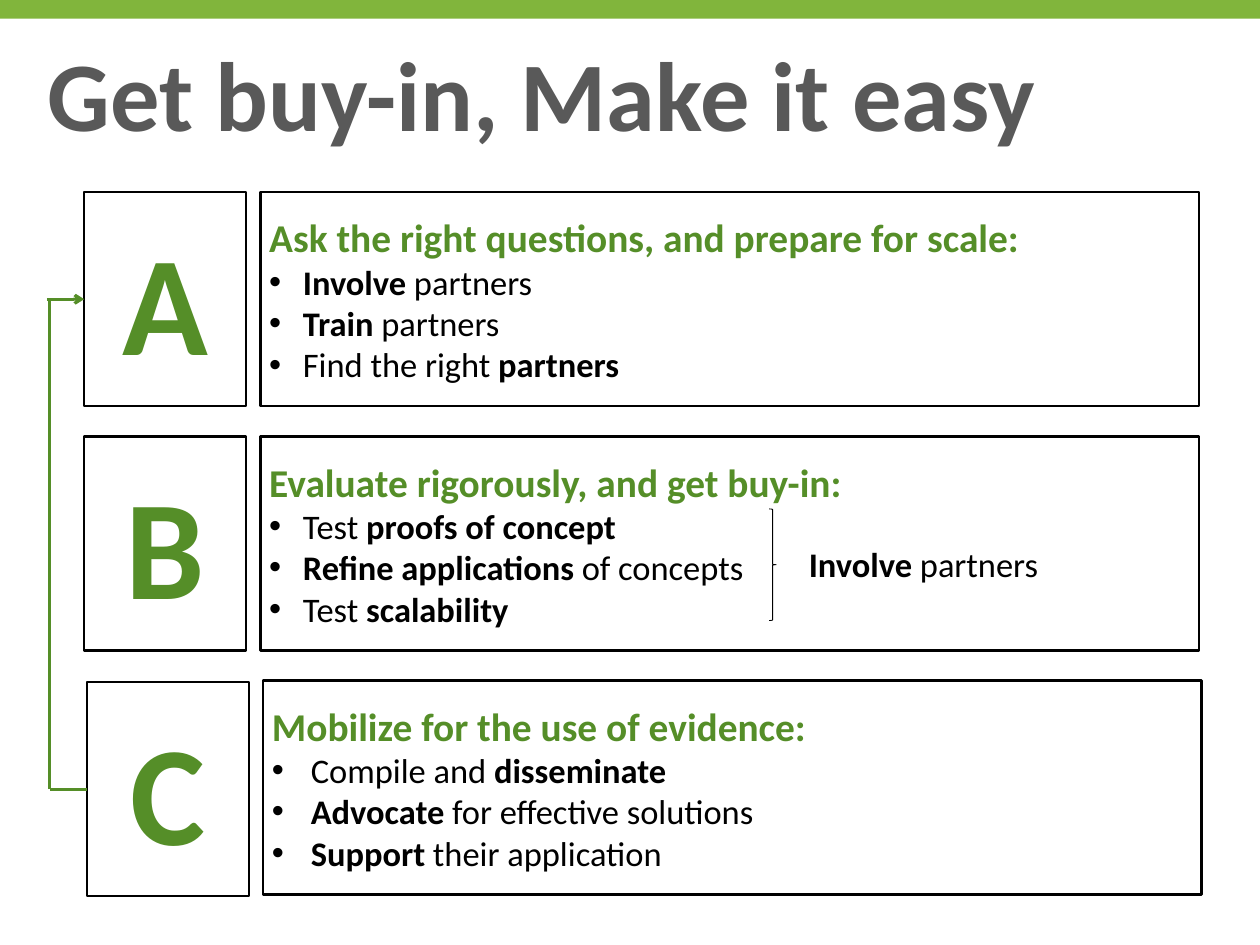
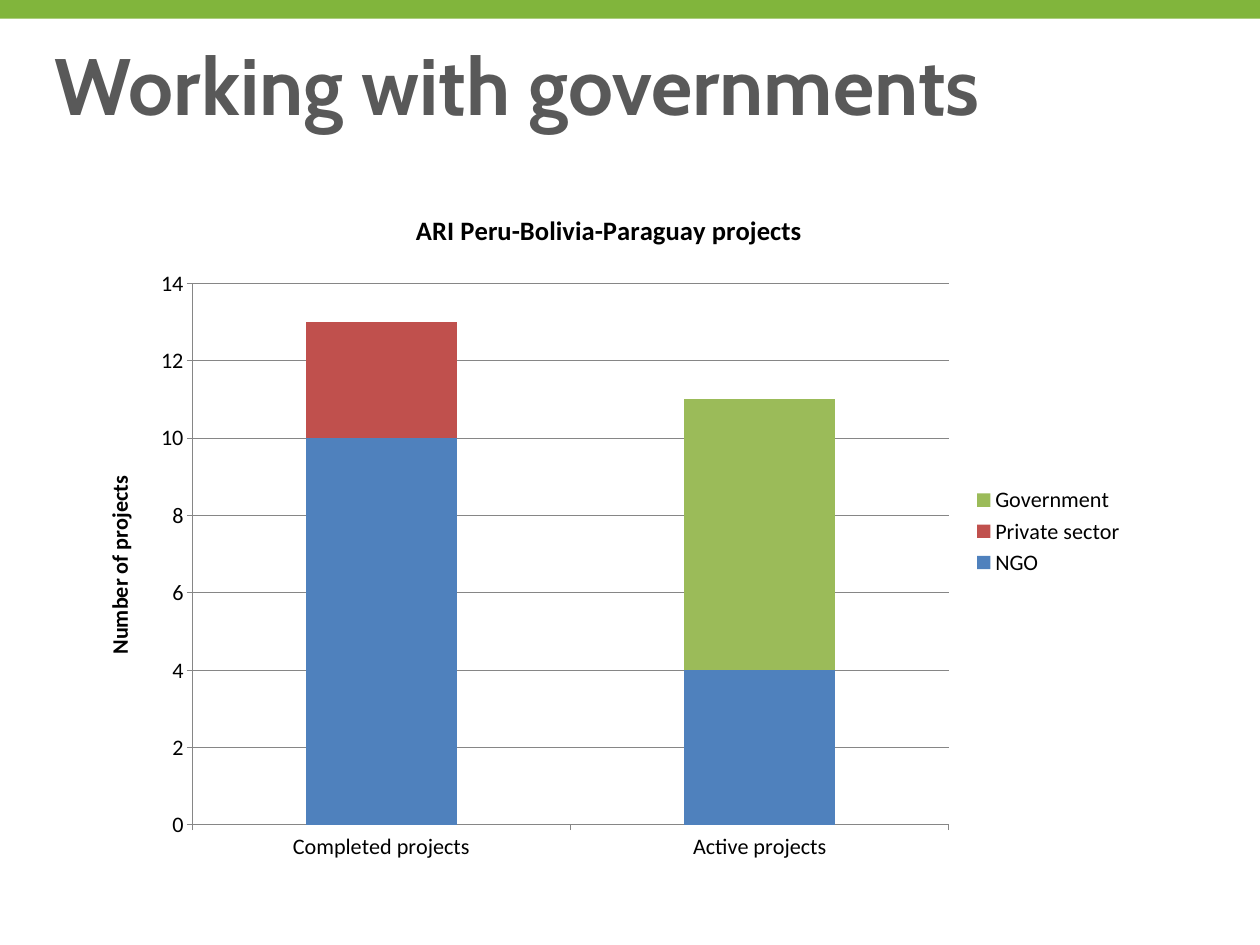
from collections import namedtuple

from lxml import etree
from pptx import Presentation
from pptx import util as u
from pptx.chart.data import CategoryChartData
from pptx.dml.color import RGBColor
from pptx.enum import chart as charts, shapes, text
from pptx.oxml import ns

COLORS = {
    "band": "81B53C", "title": "595959", "accent": "558E28", "ink": "000000",
    "axis": "868686", "NGO": "4F81BD", "Private sector": "C0504D",
    "Government": "9BBB59",
}
FONT = "Calibri"
WIDTH, HEIGHT = 14.22, 10.67
BAND_HEIGHT = 0.21
INSET = 0.1

Box = namedtuple("Box", "left top width height")

STEPS = [
    ("A", "Ask the right questions, and prepare for scale:", [
        [("Involve", True), (" partners", False)],
        [("Train", True), (" partners", False)],
        [("Find the right ", False), ("partners", True)],
    ]),
    ("B", "Evaluate rigorously, and get buy-in:", [
        [("Test ", False), ("proofs of concept", True)],
        [("Refine applications ", True), ("of concepts", False)],
        [("Test ", False), ("scalability", True)],
    ]),
    ("C", "Mobilize for the use of evidence:", [
        [("Compile and ", False), ("disseminate", True)],
        [("Advocate", True), (" for effective solutions", False)],
        [("Support", True), (" their application", False)],
    ]),
]


def color(name):
    return RGBColor.from_string(COLORS[name])


def inches(*lengths):
    return [u.Inches(length) for length in lengths]


def format_font(font, size, ink="ink", bold=False, name=FONT):
    font.name, font.size, font.bold = name, u.Pt(size), bold
    font.color.rgb = color(ink)


def add_text(frame, runs, size, first=False, align=text.PP_ALIGN.LEFT,
             indent=0, **style):
    """Write one paragraph of (words, bold) runs, bulleted when indented."""
    paragraph = frame.paragraphs[0] if first else frame.add_paragraph()
    paragraph.alignment = align
    for words, bold in runs:
        run = paragraph.add_run()
        run.text = words
        format_font(run.font, size, bold=bold, **style)
    if indent:
        properties = paragraph._p.get_or_add_pPr()
        properties.set("marL", str(u.Inches(indent)))
        properties.set("indent", str(-u.Inches(indent)))
        etree.SubElement(properties, ns.qn("a:buFont"), typeface="Arial")
        etree.SubElement(properties, ns.qn("a:buChar"), char="•")


def add_shape(slide, kind, box, fill=None, line=None, weight=2):
    shape = slide.shapes.add_shape(kind, *inches(*box))
    shape.shadow.inherit = False
    if fill:
        shape.fill.solid()
        shape.fill.fore_color.rgb = color(fill)
    else:
        shape.fill.background()
    if line:
        shape.line.color.rgb = color(line)
        shape.line.width = u.Pt(weight)
    else:
        shape.line.fill.background()
    return shape


def add_panel(slide, box):
    """Add an outlined box and return its text frame."""
    frame = add_shape(slide, shapes.MSO_SHAPE.RECTANGLE, box, line="ink").text_frame
    frame.word_wrap = True
    frame.vertical_anchor = text.MSO_ANCHOR.MIDDLE
    return frame


def add_line(slide, start, end, arrow=False):
    line = slide.shapes.add_connector(
        shapes.MSO_CONNECTOR.STRAIGHT, *inches(*start, *end))
    line.line.color.rgb = color("accent")
    line.line.width = u.Pt(2.5)
    if arrow:
        etree.SubElement(line.line._get_or_add_ln(), ns.qn("a:tailEnd"), type="arrow")
    etree.SubElement(line._element.spPr, ns.qn("a:effectLst"))


def add_band(slide):
    """Put the top band on the slide's layout, so that all slides share it."""
    band = add_shape(slide, shapes.MSO_SHAPE.RECTANGLE,
                     Box(0, 0, WIDTH, BAND_HEIGHT), fill="band")
    slide.slide_layout.shapes.element.append(band._element)


def set_title(slide, words, box, size, name=FONT, inset=INSET,
              anchor=text.MSO_ANCHOR.MIDDLE):
    title = slide.shapes.title
    title.left, title.top, title.width, title.height = inches(*box)
    frame = title.text_frame
    frame.auto_size = text.MSO_AUTO_SIZE.NONE
    frame.word_wrap = True
    frame.vertical_anchor = anchor
    frame.margin_left = frame.margin_right = u.Inches(inset)
    frame.margin_top = frame.margin_bottom = u.Inches(inset / 2)
    add_text(frame, [(words, True)], size, first=True, ink="title", name=name)


def add_step(slide, box, letter, heading, points, indent, drop):
    """Place a letter tile, lowered by drop, beside its panel of points."""
    tile_width, gap = 1.83, 0.16
    tile = add_panel(slide, Box(box.left, box.top + drop, tile_width, box.height))
    add_text(tile, [(letter, True)], 115, first=True, ink="accent",
             align=text.PP_ALIGN.CENTER)
    offset = tile_width + gap
    panel = add_panel(
        slide, Box(box.left + offset, box.top, box.width - offset, box.height))
    add_text(panel, [(heading, True)], 32, first=True, ink="accent")
    for runs in points:
        add_text(panel, runs, 28, indent=indent)


def add_brace_note(slide, box):
    """Place a brace at the left of the box and a note beside its tip."""
    brace = Box(box.left, box.top, 0.08, box.height)
    add_shape(slide, shapes.MSO_SHAPE.RIGHT_BRACE, brace, line="ink", weight=0.75)
    note = slide.shapes.add_textbox(
        *inches(box.left + 0.35, box.top + 0.34, box.width - 0.35, 0.57))
    note.text_frame.word_wrap = True
    add_text(note.text_frame, [("Involve", True), (" partners", False)], 28,
             first=True)


def add_steps(slide, box):
    """Stack the steps in the box, with a return arrow at its left."""
    gap = 0.34
    row_height = (box.height - gap * (len(STEPS) - 1)) / len(STEPS)
    pitch = row_height + gap
    for row, step in enumerate(STEPS):
        last = row == len(STEPS) - 1
        shift = 0.03 if last else 0
        place = Box(box.left + shift, box.top + row * pitch, box.width, row_height)
        add_step(slide, place, *step, indent=0.44 if last else 0.38,
                 drop=0.02 if last else 0)
    track = box.left - 0.39
    upper = box.top + row_height / 2
    lower = upper + 2 * pitch + 0.02
    add_line(slide, (box.left + 0.03, lower), (track, lower))
    add_line(slide, (track, lower), (track, upper))
    add_line(slide, (track - 0.03, upper), (box.left, upper), arrow=True)
    add_brace_note(slide, Box(box.left + 7.73, box.top + pitch + 0.82, 3.93, 1.26))


def style_axis(axis):
    format_font(axis.tick_labels.font, 18)
    axis.format.line.color.rgb = color("axis")
    axis.major_tick_mark = charts.XL_TICK_MARK.OUTSIDE
    axis.minor_tick_mark = charts.XL_TICK_MARK.NONE


def add_projects_chart(slide, box):
    data = CategoryChartData()
    data.categories = ["Completed projects", "Active projects"]
    data.add_series("NGO", (10, 4))
    data.add_series("Private sector", (3, 0))
    data.add_series("Government", (0, 7))
    chart = slide.shapes.add_chart(
        charts.XL_CHART_TYPE.COLUMN_STACKED, *inches(*box), data).chart
    format_font(chart.font, 18)

    chart.has_title = True
    add_text(chart.chart_title.text_frame,
             [("ARI Peru-Bolivia-Paraguay projects", True)], 21.6, first=True,
             align=text.PP_ALIGN.CENTER)
    chart.chart_title.include_in_layout = False
    chart.has_legend = True
    chart.legend.position = charts.XL_LEGEND_POSITION.RIGHT
    chart.legend.include_in_layout = False
    format_font(chart.legend.font, 18)

    style_axis(chart.category_axis)
    values = chart.value_axis
    style_axis(values)
    values.has_major_gridlines = True
    values.major_gridlines.format.line.color.rgb = color("axis")
    values.has_title = True
    add_text(values.axis_title.text_frame, [("Number of projects", True)], 18,
             first=True, align=text.PP_ALIGN.CENTER)

    plot = chart.plots[0]
    plot.gap_width, plot.overlap = 150, 100
    plot.vary_by_categories = False
    for series in plot.series:
        series.format.fill.solid()
        series.format.fill.fore_color.rgb = color(series.name)


def build_steps_slide(slide):
    set_title(slide, "Get buy-in, Make it easy", Box(0.44, 0.33, 13.42, 1.42), 80)
    add_steps(slide, Box(0.95, 2.17, 12.58, 7.93))


def build_chart_slide(slide):
    set_title(slide, "Working with governments", Box(0.48, 0.33, 13.38, 1.24), 65,
              name="Cabin", inset=0.14, anchor=text.MSO_ANCHOR.TOP)
    add_projects_chart(slide, Box(0.95, 2.13, 11.85, 7.74))


def main():
    presentation = Presentation()
    presentation.slide_width, presentation.slide_height = inches(WIDTH, HEIGHT)
    title_only = presentation.slide_layouts[5]
    steps_slide, chart_slide = (
        presentation.slides.add_slide(title_only) for _ in range(2))
    add_band(steps_slide)
    build_steps_slide(steps_slide)
    build_chart_slide(chart_slide)
    presentation.save("out.pptx")


if __name__ == "__main__":
    main()
